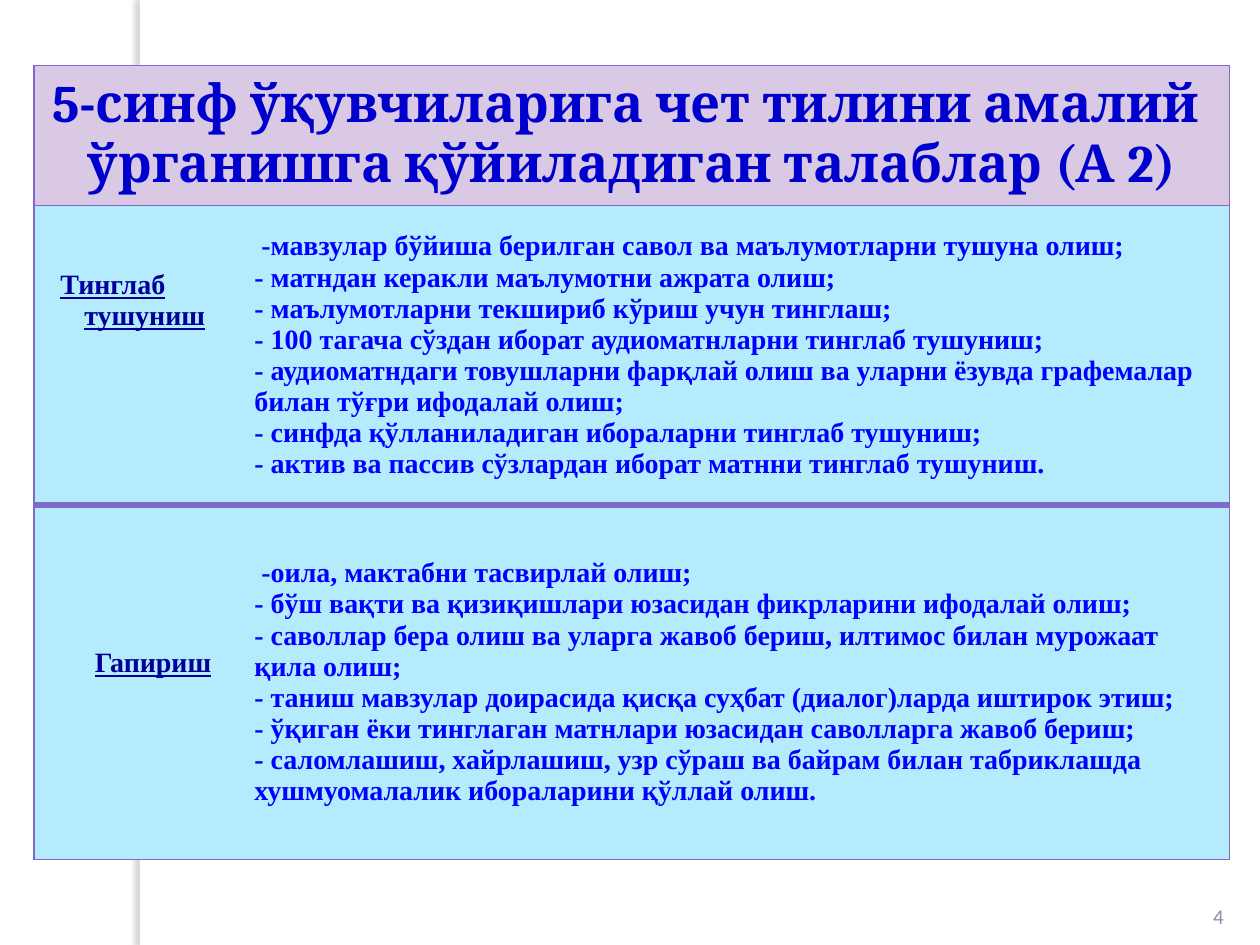
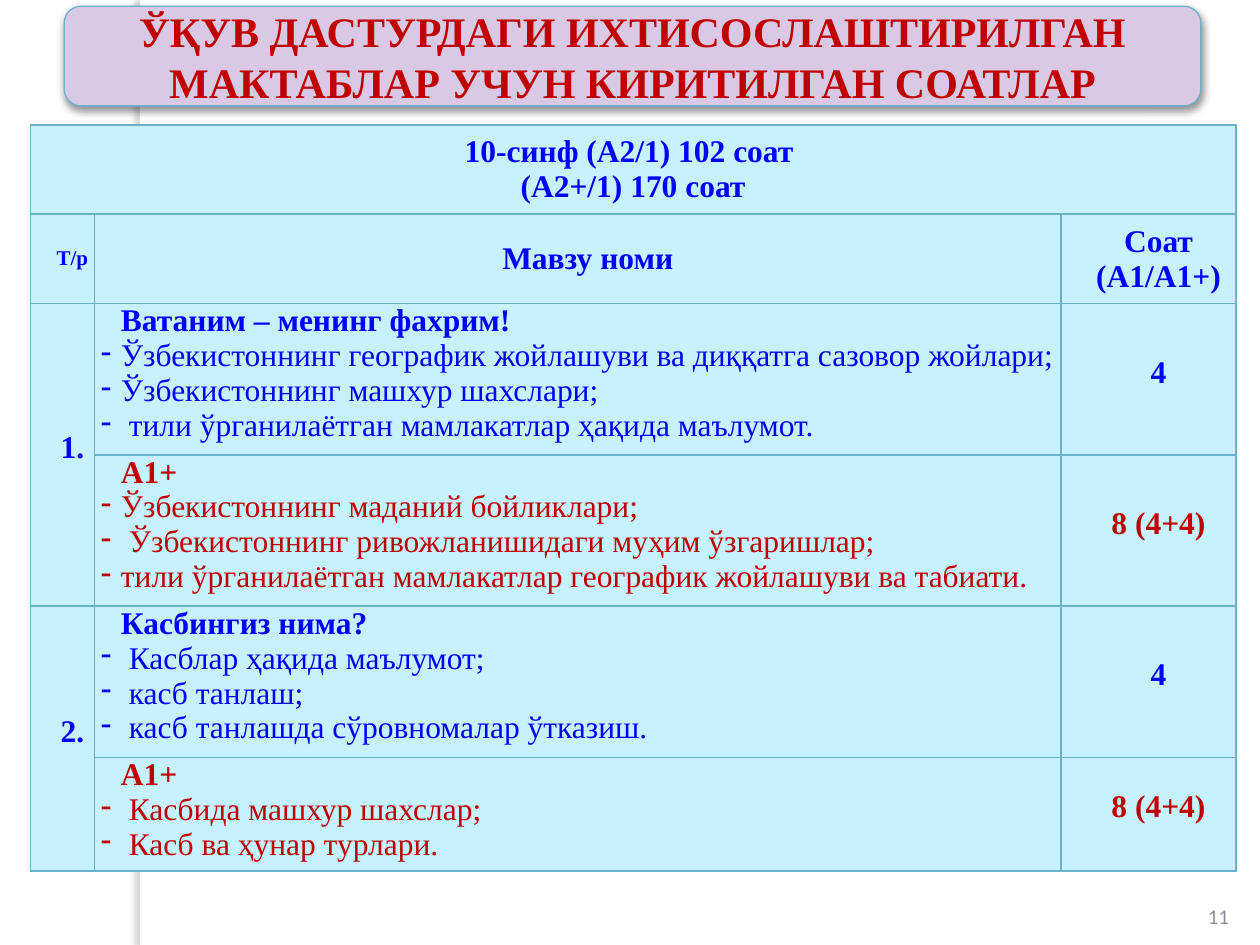
from lxml.etree import SubElement as Sub
from pptx import Presentation
from pptx.dml.color import RGBColor
from pptx.enum.shapes import MSO_SHAPE as Shape
from pptx.enum.text import MSO_ANCHOR as Anchor, PP_ALIGN as Align
from pptx.oxml import parse_xml
from pptx.oxml.ns import nsdecls, qn
from pptx.util import Inches, Pt

# Shared colours
LILAC, WHITE = "DAC9E4", "FFFFFF"
BLUE, RED, NAVY = "0000FF", "C00000", "000099"
GREY, VIOLET, TEAL = "948AA0", "7E6BC9", "6BB1C9"
SKY, PALE = "B4ECFE", "C6F1FE"

# Shared text formats
SERIF = "Times New Roman"
TEXT = {"name": SERIF, "size": Pt(16), "bold": True}
LABEL = {**TEXT, "underline": True}
HEAD = {"name": "Cambria", "size": Pt(30), "bold": True}
BAND = {**TEXT, "size": Pt(24)}
STRONG = {**TEXT, "size": Pt(18)}
PLAIN = {**STRONG, "bold": False}
SMALL = {**STRONG, "size": Pt(12)}
NUMBER = {"name": "Calibri", "size": Pt(12)}


def rgb(code):
    return RGBColor.from_string(code)


class Deck:
    def __init__(self):
        self.prs = Presentation()
        self.prs.slide_width, self.prs.slide_height = Inches(10), Inches(7.5)
        self.slide = None

    def page(self, num):
        """Start a slide with the side strip and the page number."""
        self.slide = self.prs.slides.add_slide(self.prs.slide_layouts[6])
        self.shape(Shape.RECTANGLE, (1.11, 0, 0.08, 7.5), WHITE,
                   shade=("646068", 25, 3, 3, 180))
        box = self.slide.shapes.add_textbox(*map(Inches, (9.42, 6.9, 0.5, 0.52)))
        box.text_frame.word_wrap = True
        box.text_frame.vertical_anchor = Anchor.BOTTOM
        self.text(box.text_frame, [str(num)], NUMBER, GREY)

    def shape(self, kind, box, fill, line=None, shade=None):
        item = self.slide.shapes.add_shape(kind, *map(Inches, box))
        item.shadow.inherit = False
        item.fill.solid()
        item.fill.fore_color.rgb = rgb(fill)
        if line:
            item.line.color.rgb = rgb(line)
            item.line.width = Pt(0.75)
        else:
            item.line.fill.background()
        if shade:
            self.shade(item, *shade)
        return item

    def shade(self, item, color, alpha, blur, dist, angle):
        effects = item._element.spPr.find(qn("a:effectLst"))
        outer = Sub(effects, qn("a:outerShdw"), blurRad=str(Pt(blur)),
                    dist=str(Pt(dist)), dir=str(angle * 60000),
                    algn="ctr", rotWithShape="0")
        tint = Sub(outer, qn("a:srgbClr"), val=color)
        Sub(tint, qn("a:alpha"), val=str(alpha * 1000))

    def text(self, frame, lines, form, color, align=Align.CENTER,
             indent=(0, 0), pitch=None):
        for i, line in enumerate(lines):
            para = frame.paragraphs[0] if i == 0 else frame.add_paragraph()
            self.line(para, line, form, color, align, indent, pitch)

    def line(self, para, text, form, color, align=Align.LEFT,
             indent=(0, 0), pitch=None, mark=None):
        para.alignment = align
        if pitch:
            para.line_spacing = Pt(pitch)
        props = para._p.get_or_add_pPr()
        for key, val in zip(("marL", "indent"), indent):
            props.set(key, str(Inches(val)))
        if mark:
            Sub(props, qn("a:buChar"), char=mark)
        run = para.add_run()
        run.text = text
        for key, val in form.items():
            setattr(run.font, key, val)
        run.font.color.rgb = rgb(color)

    def table(self, box, cols, rows):
        grid = self.slide.shapes.add_table(
            len(rows), len(cols), *map(Inches, box)).table
        grid.first_row = grid.horz_banding = False
        for col, size in zip(grid.columns, cols):
            col.width = Inches(size)
        for row, size in zip(grid.rows, rows):
            row.height = Inches(size)
        return grid

    def paint(self, cell, fill, line, edges, pad, top=0):
        """Fill a cell and draw its edges: left, right, top, bottom in points."""
        cell.fill.solid()
        cell.fill.fore_color.rgb = rgb(fill)
        cell.margin_left = cell.margin_right = Inches(pad)
        cell.margin_top, cell.margin_bottom = Inches(top), 0
        cell.vertical_anchor = Anchor.TOP if top else Anchor.MIDDLE
        props = cell._tc.get_or_add_tcPr()
        for i, (side, width) in enumerate(zip("LRTB", edges)):
            ink = (f'<a:solidFill><a:srgbClr val="{line}"/></a:solidFill>'
                   if width else "<a:noFill/>")
            props.insert(i, parse_xml(
                f'<a:ln{side} {nsdecls("a")} w="{Pt(width)}">{ink}</a:ln{side}>'))

    def topic(self, cell, head, items, color):
        """Set a bold heading and its dashed list."""
        cell.vertical_anchor = Anchor.TOP
        cell.margin_right = Inches(0.02)
        frame = cell.text_frame
        self.line(frame.paragraphs[0], head, STRONG, color, indent=(0.16, 0))
        for item in items:
            self.line(frame.add_paragraph(), item, PLAIN, color,
                      indent=(0.16, -0.16), mark="-")


# Skills: label, space above it, its indent and alignment, demands
SKILLS = [
    ("Тинглаб тушуниш", 0.51, (0.38, -0.19), Align.LEFT, [
        " -мавзулар бўйиша берилган савол ва маълумотларни тушуна олиш;",
        "- матндан керакли маълумотни ажрата олиш;",
        "- маълумотларни текшириб кўриш учун тинглаш;",
        "- 100 тагача сўздан иборат аудиоматнларни тинглаб тушуниш;",
        "- аудиоматндаги товушларни фарқлай олиш ва уларни ёзувда "
        "графемалар билан тўғри ифодалай олиш;",
        "- синфда қўлланиладиган ибораларни тинглаб тушуниш;",
        "- актив ва пассив сўзлардан иборат матнни тинглаб тушуниш."]),
    ("Гапириш", 1.13, (0.16, 0), Align.CENTER, [
        " -оила, мактабни тасвирлай олиш;",
        "- бўш вақти ва қизиқишлари юзасидан фикрларини ифодалай олиш;",
        "- саволлар бера олиш ва уларга жавоб бериш, илтимос билан "
        "мурожаат қила олиш;",
        "- таниш мавзулар доирасида қисқа суҳбат (диалог)ларда иштирок этиш;",
        "- ўқиган ёки тинглаган матнлари юзасидан саволларга жавоб бериш;",
        "- саломлашиш, хайрлашиш, узр сўраш ва байрам билан табриклашда "
        "хушмуомалалик ибораларини қўллай олиш."]),
]

# Topics: heading, items, hours, colour
TOPICS = [
    ("Ватаним – менинг фахрим!", [
        "Ўзбекистоннинг географик жойлашуви ва диққатга сазовор жойлари;",
        "Ўзбекистоннинг машхур шахслари;",
        " тили ўрганилаётган мамлакатлар ҳақида маълумот."], "4", BLUE),
    ("А1+", [
        "Ўзбекистоннинг маданий бойликлари;",
        " Ўзбекистоннинг ривожланишидаги муҳим ўзгаришлар;",
        "тили ўрганилаётган мамлакатлар географик жойлашуви ва табиати."],
     "8 (4+4)", RED),
    ("Касбингиз нима?", [
        " Касблар ҳақида маълумот;",
        " касб танлаш;",
        " касб танлашда сўровномалар ўтказиш."], "4", BLUE),
    ("А1+", [
        " Касбида машхур шахслар;",
        " Касб ва ҳунар турлари."], "8 (4+4)", RED),
]


def skills(deck):
    deck.page(4)
    grid = deck.table((0.27, 0.52, 9.49, 6.3), (1.73, 7.76), (1.11, 2.38, 2.81))

    # Title row
    title = grid.cell(0, 0)
    title.merge(grid.cell(0, 1))
    for col in range(2):
        deck.paint(grid.cell(0, col), LILAC, VIOLET, (1, 1, 1, 1), 0.02)
    deck.text(title.text_frame, ["5-синф ўқувчиларига чет тилини амалий ",
                                 "ўрганишга қўйиладиган талаблар (А 2)"],
              HEAD, "0000CC")

    # Skill rows, parted by a thick rule
    for row, (name, top, indent, align, lines) in enumerate(SKILLS, 1):
        ends = (1, 4) if row == 1 else (4, 1)
        left, right = grid.cell(row, 0), grid.cell(row, 1)
        deck.paint(left, SKY, VIOLET, (1, 0, *ends), 0.02, top)
        deck.paint(right, SKY, VIOLET, (0, 1, *ends), 0.02)
        deck.text(left.text_frame, [name], LABEL, NAVY, align, indent)
        deck.text(right.text_frame, lines, TEXT, BLUE, Align.LEFT)


def hours(deck):
    deck.page(11)
    grid = deck.table((0.24, 0.99, 9.57, 5.92), (0.51, 7.67, 1.39),
                      (0.71, 0.71, 1.2, 1.2, 1.2, 0.9))
    for row in range(6):
        for col in range(3):
            deck.paint(grid.cell(row, col), PALE, TEAL, (1, 1, 1, 1), 0.05)

    # Class and column heads
    grid.cell(0, 0).merge(grid.cell(0, 2))
    deck.text(grid.cell(0, 0).text_frame,
              ["10-синф (А2/1) 102 соат ", "(А2+/1) 170 соат"], STRONG, BLUE)
    heads = (("Т/р", SMALL), ("Мавзу номи", STRONG), ("Соат (А1/А1+)", STRONG))
    for col, (text, form) in enumerate(heads):
        deck.text(grid.cell(1, col).text_frame, [text], form, BLUE,
                  indent=(0.16, 0))

    # Topics, two rows to each number
    for i, (head, items, time, color) in enumerate(TOPICS):
        row = i + 2
        if i % 2 == 0:
            grid.cell(row, 0).merge(grid.cell(row + 1, 0))
            deck.text(grid.cell(row, 0).text_frame, [f"{i // 2 + 1}."],
                      STRONG, BLUE, indent=(0.16, 0), pitch=12)
        deck.topic(grid.cell(row, 1), head, items, color)
        deck.text(grid.cell(row, 2).text_frame, [time], STRONG, color,
                  indent=(0.16, 0), pitch=12)

    # Title band
    band = deck.shape(Shape.ROUNDED_RECTANGLE, (0.51, 0.05, 9.02, 0.79),
                      LILAC, TEAL, ("000000", 43, 5, 2, 90))
    band.text_frame.word_wrap = True
    band.text_frame.vertical_anchor = Anchor.MIDDLE
    deck.text(band.text_frame, ["ЎҚУВ ДАСТУРДАГИ ИХТИСОСЛАШТИРИЛГАН "
                                "МАКТАБЛАР УЧУН КИРИТИЛГАН СОАТЛАР"], BAND, RED)


def main():
    deck = Deck()
    skills(deck)
    hours(deck)
    deck.prs.save("out.pptx")


if __name__ == "__main__":
    main()
